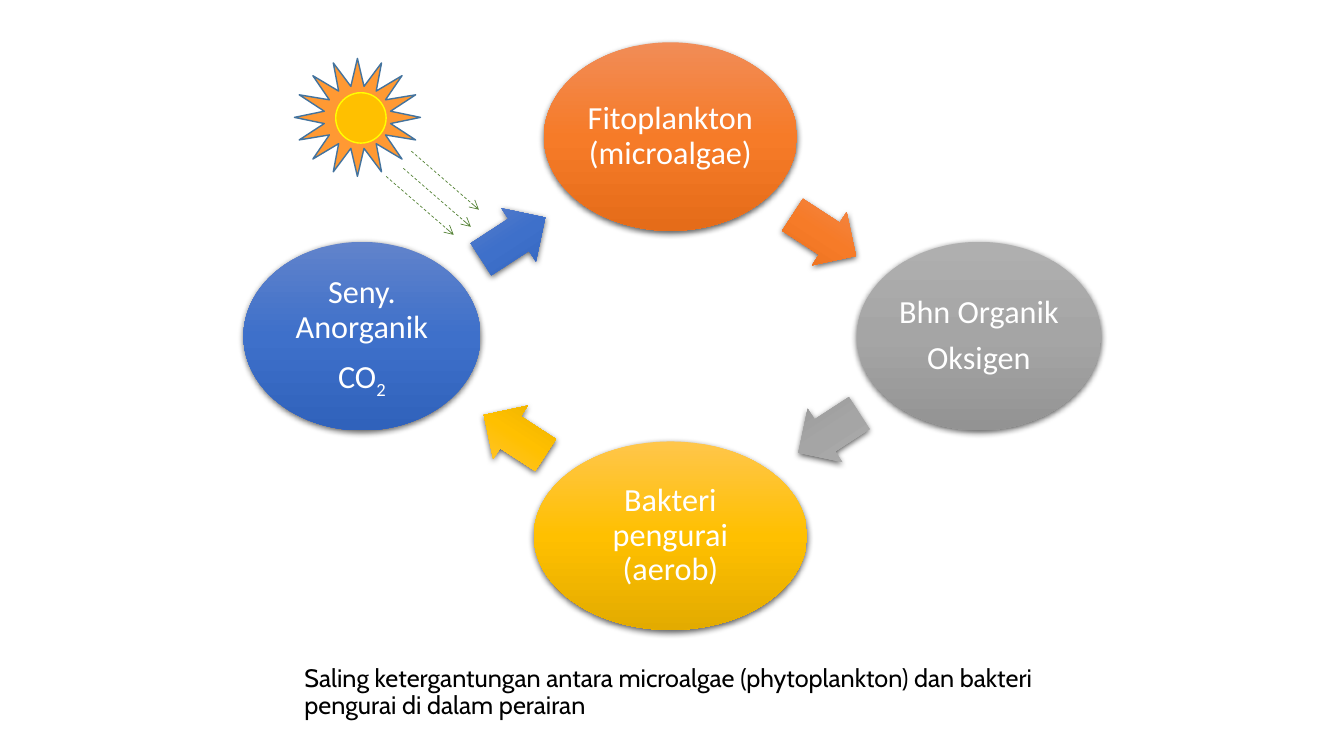
from copy import deepcopy

from lxml import etree
from pptx import Presentation
from pptx.dml.color import RGBColor
from pptx.enum.dml import MSO_LINE
from pptx.enum.shapes import MSO_CONNECTOR, MSO_SHAPE
from pptx.enum.text import MSO_ANCHOR, PP_ALIGN
from pptx.oxml import parse_xml
from pptx.oxml.ns import nsdecls, qn
from pptx.util import Inches, Pt

ORANGE = ("F18C57", "F67B28", "E56C19")
GREY = ("AFAFAF", "A5A5A5", "939393")
YELLOW = ("FFC64B", "FFC000", "E3AB00")
BLUE = ("6183CB", "3E70CA", "3062BB")
NODE_HEIGHT = 1.87
ARROW_HEIGHT = 0.63

# Centre x, top, width, colours, paragraphs
NODES = [
    (6.65, 0.42, 2.51, ORANGE, ["Fitoplankton (microalgae)"]),
    (9.71, 2.4, 2.42, GREY, ["Bhn Organik", "Oksigen"]),
    (6.65, 4.38, 2.71, YELLOW, ["Bakteri pengurai (aerob)"]),
    (3.59, 2.4, 2.35, BLUE, ["Seny. Anorganik", "CO_2"]),
]
# Left, top, width, rotation, colours
ARROWS = [
    (7.8, 2.02, 0.75, 33, ORANGE),
    (7.86, 3.98, 0.72, 147, GREY),
    (4.74, 4, 0.73, 213, YELLOW),
    (4.71, 2.05, 0.76, 327, BLUE),
]
RAY_STARTS = [(3.83, 1.75), (4, 1.67), (4.08, 1.5)]
RAY_RUN, RAY_DROP = 0.67, 0.58


def rgb(hex_colour):
    return RGBColor.from_string(hex_colour)


def write_text(shape, paragraphs, *, size, font, colour, align=PP_ALIGN.LEFT,
               inset=None, space_after=0):
    """Fill the shape with text; an underscore starts a subscript."""
    frame = shape.text_frame
    frame.word_wrap = True
    frame.vertical_anchor = MSO_ANCHOR.MIDDLE
    if inset is not None:
        frame.margin_left = frame.margin_right = Inches(inset)
        frame.margin_top = frame.margin_bottom = Inches(inset)
    for index, text in enumerate(paragraphs):
        para = frame.add_paragraph() if index else frame.paragraphs[0]
        para.alignment = align
        para.line_spacing = 0.9
        para.space_after = Pt(space_after)
        for part, piece in enumerate(text.split("_")):
            span = para.add_run()
            span.text = piece
            span.font.size = Pt(size)
            span.font.name = font
            span.font.color.rgb = rgb(colour)
            if part:
                span.font._element.set("baseline", "-25000")


def add_preset(page, kind, left, top, width, height):
    shape = page.shapes.add_shape(
        kind, Inches(left), Inches(top), Inches(width), Inches(height))
    shape.shadow.inherit = False
    return shape


def add_flat(page, kind, left, top, width, height, fill, line):
    shape = add_preset(page, kind, left, top, width, height)
    shape.fill.solid()
    shape.fill.fore_color.rgb = rgb(fill)
    shape.line.color.rgb = rgb(line)
    shape.line.width = Pt(1)
    return shape


def add_glossy(page, kind, left, top, width, height, colours):
    """Add a borderless shape with a vertical gradient and a soft shadow."""
    shape = add_preset(page, kind, left, top, width, height)
    shape.line.fill.background()
    shape.fill.gradient()
    shape.fill.gradient_angle = 270
    properties = shape._element.spPr
    stop_list = properties.find(".//" + qn("a:gsLst"))
    stop_list.insert(1, deepcopy(stop_list[0]))
    for stop, colour, position in zip(shape.fill.gradient_stops, colours, (0, 0.5, 1)):
        stop.color.rgb = rgb(colour)
        stop.position = position
    properties.find(qn("a:effectLst")).append(parse_xml(
        f'<a:outerShdw {nsdecls("a")} blurRad="{Pt(4.5)}" dist="{Pt(1.5)}" '
        'dir="5400000" algn="ctr" rotWithShape="0">'
        '<a:srgbClr val="000000"><a:alpha val="63000"/></a:srgbClr></a:outerShdw>'))
    return shape


def add_node(page, centre, top, width, colours, paragraphs):
    node = add_glossy(page, MSO_SHAPE.OVAL, centre - width / 2, top, width,
                      NODE_HEIGHT, colours)
    write_text(node, paragraphs, size=23, font="Calibri", colour="FFFFFF",
               align=PP_ALIGN.CENTER, inset=0.03, space_after=8)


def add_cycle_arrow(page, left, top, width, rotation, colours):
    arrow = add_glossy(page, MSO_SHAPE.RIGHT_ARROW, left, top, width,
                       ARROW_HEIGHT, colours)
    arrow.adjustments[0] = 0.6
    arrow.adjustments[1] = 0.5
    arrow.rotation = rotation


def add_ray(page, left, top):
    ray = page.shapes.add_connector(
        MSO_CONNECTOR.STRAIGHT, Inches(left), Inches(top),
        Inches(left + RAY_RUN), Inches(top + RAY_DROP))
    ray.line.color.rgb = rgb("548235")
    ray.line.width = Pt(0.5)
    ray.line.dash_style = MSO_LINE.DASH
    properties = ray._element.spPr
    etree.SubElement(properties.find(qn("a:ln")), qn("a:tailEnd"), type="arrow")
    etree.SubElement(properties, qn("a:effectLst"))


def add_sun(page):
    star = add_flat(page, MSO_SHAPE.STAR_16_POINT, 2.92, 0.58, 1.25, 1.17,
                    "FF9933", "43739E")
    star.adjustments[0] = 0.268
    add_flat(page, MSO_SHAPE.OVAL, 3.33, 0.92, 0.5, 0.5, "FFC000", "FFFF00")
    for start in RAY_STARTS:
        add_ray(page, *start)


def main():
    deck = Presentation()
    deck.slide_width = Inches(13.33)
    deck.slide_height = Inches(7.5)
    page = deck.slides.add_slide(deck.slide_layouts[6])
    caption = page.shapes.add_textbox(
        Inches(2.92), Inches(6.25), Inches(7.58), Inches(1.25))
    write_text(caption, ["Saling ketergantungan antara microalgae (phytoplankton) "
                         "dan bakteri pengurai di dalam perairan"],
               size=18, font="Cabin", colour="000000")
    for node, arrow in zip(NODES, ARROWS):
        add_node(page, *node)
        add_cycle_arrow(page, *arrow)
    add_sun(page)
    deck.save("out.pptx")


if __name__ == "__main__":
    main()
